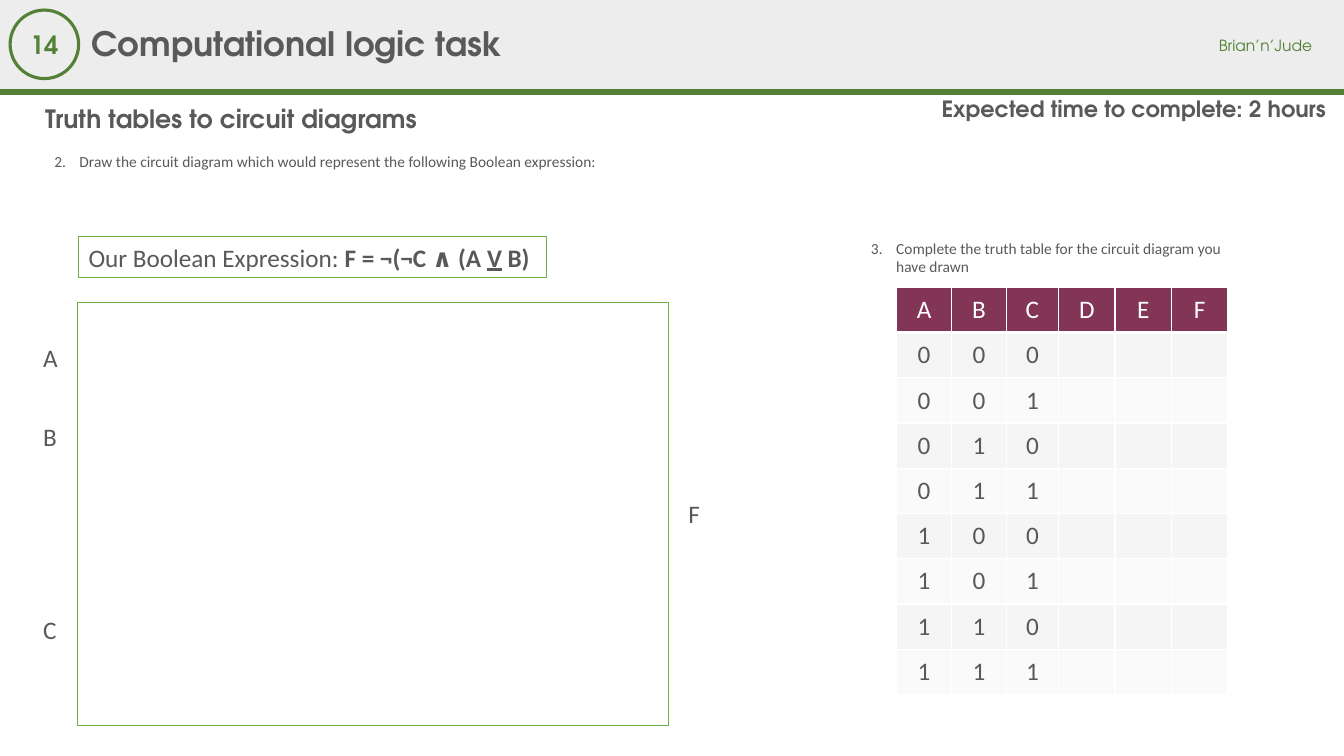
from lxml.etree import SubElement
from pptx import Presentation
from pptx.dml.color import RGBColor
from pptx.enum.shapes import MSO_CONNECTOR as Connector, MSO_SHAPE as Preset
from pptx.enum.text import MSO_ANCHOR as Anchor, PP_ALIGN as Align
from pptx.oxml.ns import qn
from pptx.util import Inches, Pt

COLORS = {
    "band": "EDEDED", "green": "538135", "outline": "70AD47", "text": "595959",
    "table_head": "823554", "odd_row": "F6F5F5", "even_row": "FAFAFA", "white": "FFFFFF",
}
HEADING = "TeX Gyre Adventor"
BODY = "Calibri"


def color(name):
    return RGBColor.from_string(COLORS[name])


def write(frame, *runs, size=18, font=BODY, fill="text", bold=False, align=Align.LEFT,
          anchor=Anchor.TOP, wrap=True, spacing=None, number=None):
    frame.word_wrap = wrap
    frame.vertical_anchor = anchor
    paragraph = frame.paragraphs[0]
    paragraph.alignment = align
    if spacing:
        paragraph.line_spacing = spacing
    if number:
        properties = paragraph._p.get_or_add_pPr()
        properties.set("marL", str(Inches(0.25)))
        properties.set("indent", str(-Inches(0.25)))
        SubElement(properties, qn("a:buFont"), typeface="+mj-lt")
        SubElement(properties, qn("a:buAutoNum"), type="arabicPeriod", startAt=str(number))
    for item in runs:
        text, styles = item if isinstance(item, tuple) else (item, {})
        run = paragraph.add_run()
        run.text = text
        run.font.name = font
        run.font.size = Pt(size)
        run.font.color.rgb = color(fill)
        run.font.bold = styles.get("bold", bold)
        run.font.underline = styles.get("underline", False)


def add_text(slide, box, text, **style):
    shape = slide.shapes.add_textbox(*map(Inches, box))
    write(shape.text_frame, text, **style)


def add_shape(slide, preset, box, fill=None, line=None, width=1):
    shape = slide.shapes.add_shape(preset, *map(Inches, box))
    shape.shadow.inherit = False
    if fill:
        shape.fill.solid()
        shape.fill.fore_color.rgb = color(fill)
    else:
        shape.fill.background()
    if line:
        shape.line.color.rgb = color(line)
        shape.line.width = Pt(width)
    else:
        shape.line.fill.background()
    return shape


def add_header(slide, box):
    left, top, width, height = box
    add_shape(slide, Preset.RECTANGLE, box, fill="band")
    rule = slide.shapes.add_connector(
        Connector.STRAIGHT, Inches(left), Inches(top + height),
        Inches(left + width), Inches(top + height))
    rule.line.color.rgb = color("green")
    rule.line.width = Pt(4.5)
    SubElement(rule._element.spPr, qn("a:effectLst"))

    add_text(slide, (left + 11.99, top + 0.31, 1.22, 0.29), "Brian’n’Jude",
             size=11, font=HEADING, fill="green", wrap=False)
    badge = add_shape(slide, Preset.OVAL, (left + 0.1, top + 0.1, 0.68, 0.68),
                      line="green", width=2.25)
    frame = badge.text_frame
    frame.margin_left = frame.margin_right = 0
    write(frame, "14", font=HEADING, fill="green", bold=True,
          align=Align.CENTER, anchor=Anchor.MIDDLE)
    add_text(slide, (left + 0.81, top + 0.09, 10.31, 0.73), "Computational logic task",
             size=24, font=HEADING, bold=True, anchor=Anchor.MIDDLE, spacing=0.9)


def add_headings(slide, box):
    left, top, width, height = box
    add_text(slide, (left + 0.35, top + 0.06, 5.71, height), "Truth tables to circuit diagrams",
             font=HEADING, bold=True, anchor=Anchor.MIDDLE, spacing=0.9)
    add_text(slide, (left + width - 4.09, top, 4.09, height),
             "Expected time to complete: 2 hours",
             size=16, font=HEADING, bold=True, spacing=0.9)


def add_circuit_task(slide, box):
    left, top, width, height = box
    add_text(slide, (left + 0.11, top, 6.23, 0.29),
             "Draw the circuit diagram which would represent the following Boolean expression:",
             size=11, number=2)
    expression = add_shape(slide, Preset.RECTANGLE, (left + 0.45, top + 0.89, 4.64, 0.4),
                           line="outline", width=0.75)
    write(expression.text_frame, "Our Boolean Expression: ",
          ("F = ¬(¬C ∧ (A ", {"bold": True}),
          ("V", {"bold": True, "underline": True}),
          (" B)", {"bold": True}))
    add_shape(slide, Preset.RECTANGLE, (left + 0.44, top + 1.54, 5.86, 4.2), line="outline")
    for label, across, down in [("A", 0, 1.89), ("B", 0, 2.67), ("C", 0, 4.59), ("F", 6.4, 3.43)]:
        add_text(slide, (left + across, top + down, 0.34, 0.4), label, wrap=False)


def add_borders(cell, bottom):
    properties = cell._tc.get_or_add_tcPr()
    for side, points in (("L", 1), ("R", 1), ("T", 1), ("B", bottom)):
        border = SubElement(properties, qn("a:ln" + side), w=str(Pt(points)))
        solid = SubElement(border, qn("a:solidFill"))
        SubElement(solid, qn("a:srgbClr"), val=COLORS["white"])


def add_truth_table(slide, box):
    left, top, width, height = box
    add_text(slide, (left, top, width, 0.47),
             "Complete the truth table for the circuit diagram you have drawn",
             size=11, number=3)
    rows = [list("ABCDEF")]
    rows += [list(format(value, "03b")) + [""] * 3 for value in range(8)]
    column_widths = [0.55, 0.54, 0.52, 0.56, 0.56, 0.56]
    table_height = height - 0.53
    table = slide.shapes.add_table(
        len(rows), len(column_widths), Inches(left + 0.35), Inches(top + 0.53),
        Inches(sum(column_widths)), Inches(table_height)).table
    for column, column_width in zip(table.columns, column_widths):
        column.width = Inches(column_width)
    for row_index, values in enumerate(rows):
        table.rows[row_index].height = Inches(table_height / len(rows))
        is_head = row_index == 0
        fill = "table_head" if is_head else "odd_row" if row_index % 2 else "even_row"
        for column_index, value in enumerate(values):
            cell = table.cell(row_index, column_index)
            add_borders(cell, 3 if is_head else 1)
            cell.fill.solid()
            cell.fill.fore_color.rgb = color(fill)
            cell.vertical_anchor = Anchor.MIDDLE
            if value:
                write(cell.text_frame, value, fill="white" if is_head else "text",
                      align=Align.CENTER)


def main():
    presentation = Presentation()
    presentation.slide_width = Inches(13.33)
    presentation.slide_height = Inches(7.5)
    slide = presentation.slides.add_slide(presentation.slide_layouts[6])
    add_header(slide, (0, 0, 13.33, 0.91))
    add_headings(slide, (0, 0.93, 13.33, 0.4))
    add_circuit_task(slide, (0.33, 1.46, 6.72, 5.74))
    add_truth_table(slide, (8.54, 2.32, 3.85, 4.57))
    presentation.save("out.pptx")


if __name__ == "__main__":
    main()
